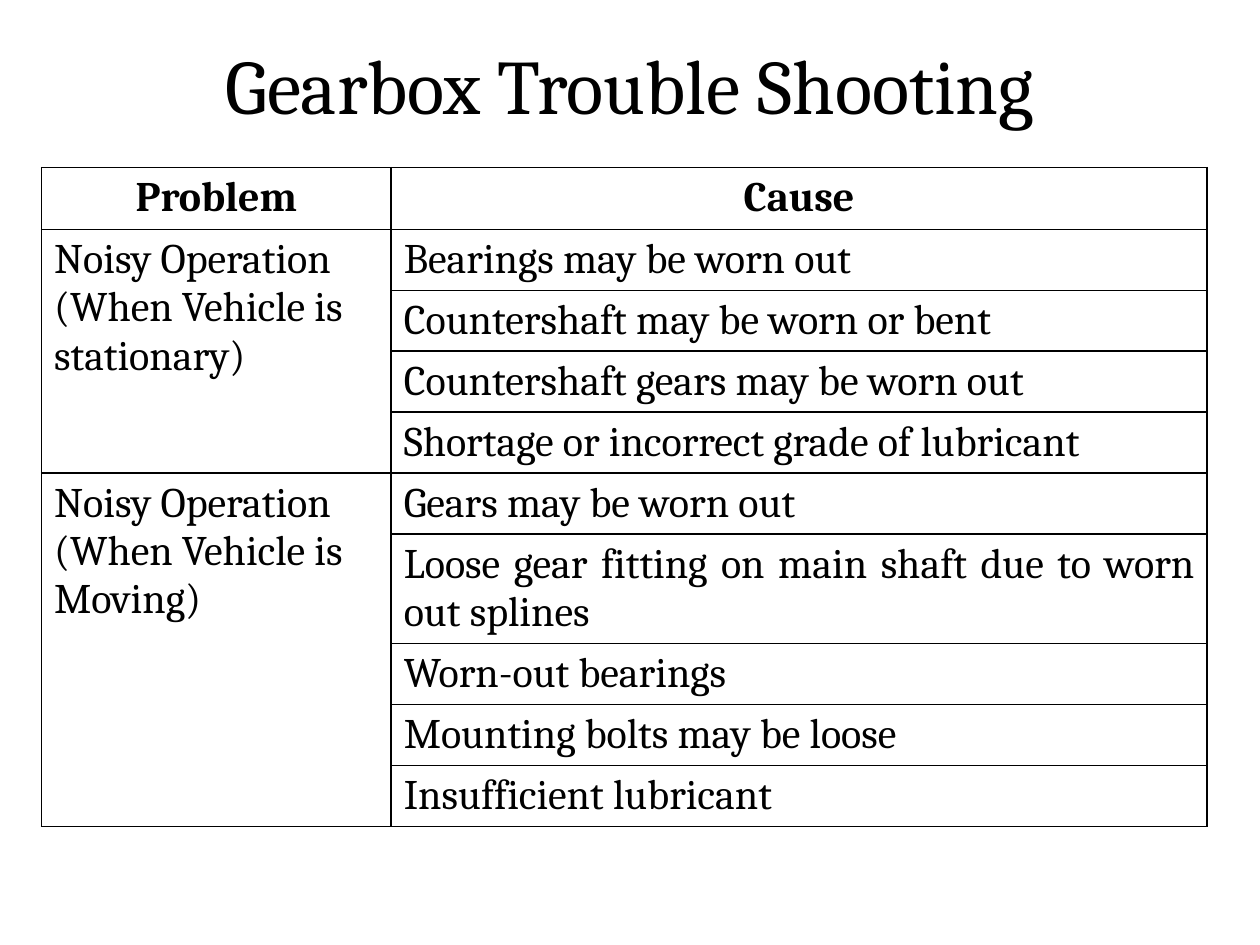
from dataclasses import dataclass

from lxml.etree import SubElement
from pptx import Presentation
from pptx.dml.color import RGBColor
from pptx.enum.text import MSO_ANCHOR, PP_ALIGN as Align
from pptx.oxml.ns import qn
from pptx.util import Inches, Pt


@dataclass(frozen=True)
class Theme:
    font: str = "Cambria"
    ink: str = "000000"
    paper: str = "FFFFFF"
    title_size: int = 44
    body_size: int = 24
    border: int = 1


@dataclass(frozen=True)
class Fault:
    problem: str
    causes: tuple[str, ...]


THEME = Theme()
WIDTH, HEIGHT = 10, 7.5
TABLE_WIDTH, TABLE_HEIGHT = 9.25, 5.4
COLUMN_SHARES = (0.3, 0.7)
HEADINGS = ("Problem", "Cause")
HEADER_ROW, FIRST_ROWS, OTHER_ROWS = 0.49, 0.44, 0.33
FAULTS = (
    Fault("Noisy Operation (When Vehicle is stationary)", (
        "Bearings may be worn out",
        "Countershaft may be worn or bent",
        "Countershaft gears may be worn out",
        "Shortage or incorrect grade of lubricant",
    )),
    Fault("Noisy Operation (When Vehicle is Moving)", (
        "Gears may be worn out",
        "Loose gear fitting on main shaft due to worn out splines",
        "Worn-out bearings",
        "Mounting bolts may be loose",
        "Insufficient lubricant",
    )),
)


def write(tf, text: str, *, size: int = THEME.body_size, bold: bool = False,
          align: Align = Align.LEFT) -> None:
    p = tf.paragraphs[0]
    p.alignment = align
    r = p.add_run()
    r.text = text
    r.font.name = THEME.font
    r.font.size = Pt(size)
    r.font.bold = bold
    r.font.color.rgb = RGBColor.from_string(THEME.ink)


def style_cell(cell) -> None:
    tc_pr = cell._tc.get_or_add_tcPr()
    for side in ("a:lnL", "a:lnR", "a:lnT", "a:lnB"):
        ln = SubElement(tc_pr, qn(side), w=str(Pt(THEME.border)))
        fill = SubElement(ln, qn("a:solidFill"))
        SubElement(fill, qn("a:srgbClr"), val=THEME.ink)
    cell.fill.solid()
    cell.fill.fore_color.rgb = RGBColor.from_string(THEME.paper)


def draw_title(s, text: str) -> None:
    sp = s.shapes.title
    sp.left, sp.top = Inches(0.05 * WIDTH), Inches(0.25)
    sp.width, sp.height = Inches(0.9 * WIDTH), Inches(0.83)
    sp.text_frame.vertical_anchor = MSO_ANCHOR.MIDDLE
    write(sp.text_frame, text, size=THEME.title_size, align=Align.CENTER)


def draw_table(s, faults: tuple[Fault, ...]) -> None:
    row_count = 1 + sum(len(fault.causes) for fault in faults)
    frame = s.shapes.add_table(row_count, len(HEADINGS), Inches(0.33), Inches(1.33),
                               Inches(TABLE_WIDTH), Inches(TABLE_HEIGHT))
    table = frame.table
    table.first_row = table.horz_banding = False
    for column, share in zip(table.columns, COLUMN_SHARES):
        column.width = Inches(share * TABLE_WIDTH)
    for i, row in enumerate(table.rows):
        row.height = Inches(HEADER_ROW if i == 0 else FIRST_ROWS if i < 4 else OTHER_ROWS)
    frame.height = Inches(TABLE_HEIGHT)
    for cell in table.iter_cells():
        style_cell(cell)

    for i, heading in enumerate(HEADINGS):
        write(table.cell(0, i).text_frame, heading, bold=True, align=Align.CENTER)
    top = 1
    for fault in faults:
        end = top + len(fault.causes)
        table.cell(top, 0).merge(table.cell(end - 1, 0))
        write(table.cell(top, 0).text_frame, fault.problem)
        for i, cause in enumerate(fault.causes, top):
            write(table.cell(i, 1).text_frame, cause, align=Align.JUSTIFY)
        top = end


def main() -> None:
    prs = Presentation()
    prs.slide_width, prs.slide_height = Inches(WIDTH), Inches(HEIGHT)
    s = prs.slides.add_slide(prs.slide_layouts[5])
    draw_title(s, "Gearbox Trouble Shooting")
    draw_table(s, FAULTS)
    prs.save("out.pptx")


if __name__ == "__main__":
    main()
